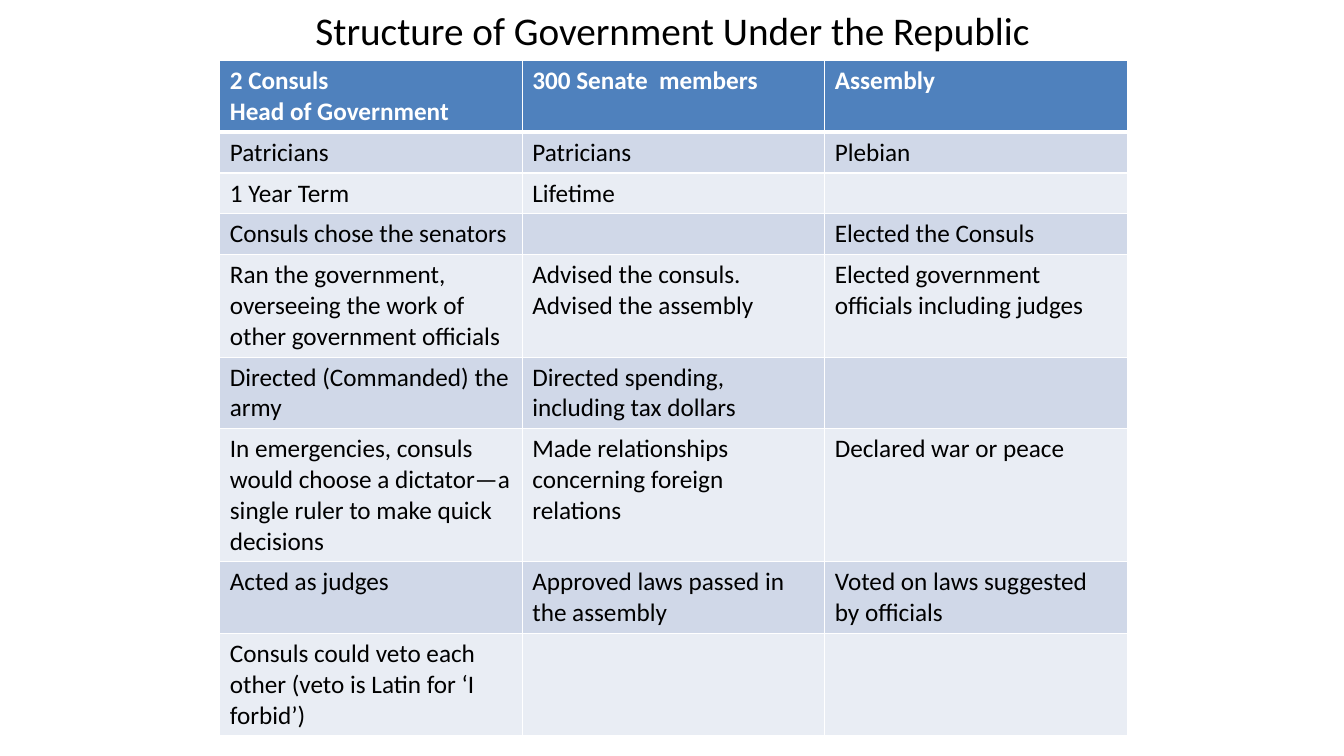
from pptx import Presentation
from pptx.dml.color import RGBColor
from pptx.enum.text import MSO_ANCHOR, PP_ALIGN
from pptx.oxml import parse_xml
from pptx.oxml.ns import nsdecls
from pptx.util import Pt

CENTER, LEFT = PP_ALIGN.CENTER, PP_ALIGN.LEFT
MIDDLE, TOP = MSO_ANCHOR.MIDDLE, MSO_ANCHOR.TOP

PX = 9144  # 100 px to the inch
FONT = "Calibri"
BLACK, WHITE = "000000", "FFFFFF"
HEADER_FILL = "4F81BD"
BAND_FILLS = ["E9EDF4", "D0D8E8"]
ROW_HEIGHT = 40

TITLE = "Structure of Government Under the Republic"
GOVERNMENT = [
    ["2 Consuls\nHead of Government", "300 Senate  members", "Assembly"],
    ["Patricians", "Patricians", "Plebian"],
    ["1 Year Term", "Lifetime", ""],
    ["Consuls chose the senators", "", "Elected the Consuls"],
    ["Ran the government, overseeing the work of other government officials",
     "Advised the consuls. Advised the assembly",
     "Elected government officials including judges"],
    ["Directed (Commanded) the army", "Directed spending, including tax dollars", ""],
    ["In emergencies, consuls would choose a dictator—a single ruler to make quick decisions",
     "Made relationships concerning foreign relations",
     "Declared war or peace"],
    ["Acted as judges", "Approved laws passed in the assembly",
     "Voted on laws suggested by officials"],
    ["Consuls could veto each other (veto is Latin for ‘I forbid’)", "", ""],
]


def px(*lengths):
    return [length * PX for length in lengths]


def rgb(value):
    return RGBColor.from_string(value)


def write_text(frame, text, size=18, color=BLACK, bold=False, align=LEFT, anchor=TOP):
    frame.text = text
    frame.word_wrap = True
    frame.vertical_anchor = anchor
    for paragraph in frame.paragraphs:
        paragraph.alignment = align
        font = paragraph.font
        font.name, font.size, font.bold = FONT, Pt(size), bold
        font.color.rgb = rgb(color)


def set_borders(cell, color, bottom=1):
    properties = cell._tc.get_or_add_tcPr()
    for side, width in (("L", 1), ("R", 1), ("T", 1), ("B", bottom)):
        properties.append(parse_xml(
            f'<a:ln{side} {nsdecls("a")} w="{Pt(width)}"><a:solidFill>'
            f'<a:srgbClr val="{color}"/></a:solidFill></a:ln{side}>'))


def add_title(slide, left, top, width, height):
    title = slide.shapes.title
    title.left, title.top, title.width, title.height = px(left, top, width, height)
    write_text(title.text_frame, TITLE, size=28, align=CENTER, anchor=MIDDLE)


def add_government_table(slide, left, top, width):
    row_count, column_count = len(GOVERNMENT), len(GOVERNMENT[0])
    table = slide.shapes.add_table(
        row_count, column_count,
        *px(left, top, width, ROW_HEIGHT * row_count)).table
    for row_index, texts in enumerate(GOVERNMENT):
        header = row_index == 0
        for column_index, text in enumerate(texts):
            cell = table.cell(row_index, column_index)
            set_borders(cell, WHITE, bottom=3 if header else 1)
            cell.fill.solid()
            cell.fill.fore_color.rgb = rgb(
                HEADER_FILL if header else BAND_FILLS[row_index % 2])
            write_text(cell.text_frame, text, bold=header,
                       color=WHITE if header else BLACK)


def main():
    presentation = Presentation()
    presentation.slide_width, presentation.slide_height = px(1333, 750)
    slide = presentation.slides.add_slide(presentation.slide_layouts[5])
    slide.background.fill.solid()
    slide.background.fill.fore_color.rgb = rgb(WHITE)

    # Heading above the comparison of the three bodies
    add_title(slide, 217, 0, 900, 60)
    add_government_table(slide, 218, 60, 900)

    presentation.save("out.pptx")


if __name__ == "__main__":
    main()
